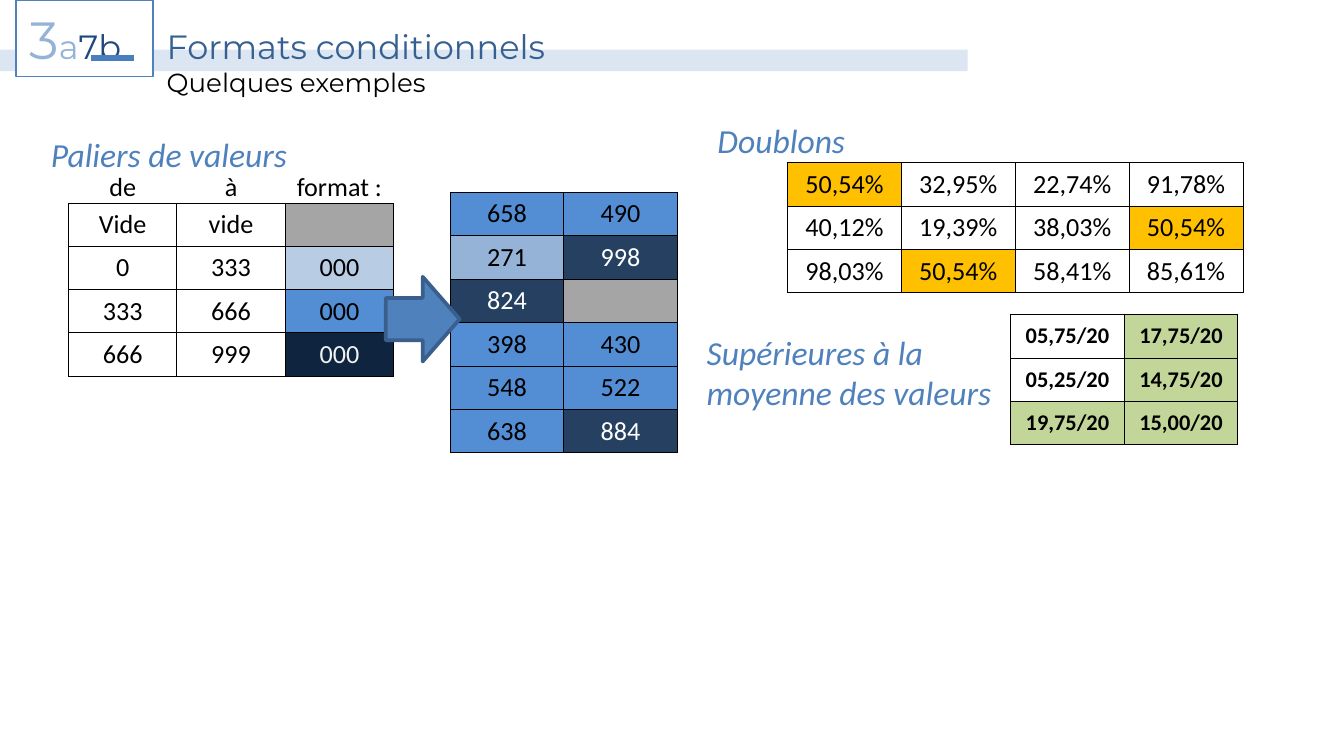
from collections import Counter
from lxml.etree import SubElement
from pptx import Presentation
from pptx.dml.color import RGBColor
from pptx.enum.shapes import MSO_CONNECTOR, MSO_SHAPE
from pptx.enum.text import MSO_ANCHOR, PP_ALIGN
from pptx.oxml.ns import qn
from pptx.util import Inches, Pt

BLACK = RGBColor(0x00, 0x00, 0x00)
WHITE = RGBColor(0xFF, 0xFF, 0xFF)
PALE = RGBColor(0xF2, 0xF2, 0xF2)
GREY = RGBColor(0xA5, 0xA5, 0xA5)
BAND = RGBColor(0xDC, 0xE6, 0xF2)
BLUE = RGBColor(0x4F, 0x81, 0xBD)
TITLE = RGBColor(0x37, 0x60, 0x92)
NAVY = RGBColor(0x1F, 0x49, 0x7D)
RULE = RGBColor(0x4B, 0x7E, 0xBC)
EDGE = RGBColor(0x3A, 0x5F, 0x8C)
SOFT = RGBColor(0x95, 0xB3, 0xD7)
LIGHT = RGBColor(0xB8, 0xCC, 0xE4)
MID = RGBColor(0x53, 0x8E, 0xD5)
DARK = RGBColor(0x25, 0x40, 0x61)
INK = RGBColor(0x0F, 0x25, 0x3F)
GOLD = RGBColor(0xFF, 0xC0, 0x00)
GREEN = RGBColor(0xC2, 0xD6, 0x9A)

# Content
HEAD = [("Formats conditionnels", 18, TITLE), ("Quelques exemples", 14, BLACK)]
BADGE = [("3", 28, SOFT), ("a", 18, SOFT), ("7b", 18, NAVY)]
LABELS = [
    ("Paliers de valeurs", 0.28, 0.95, 0.4),
    ("Supérieures à la moyenne des valeurs", 5.16, 2.42, 0.71),
    ("Doublons", 5.24, 0.84, 0.4),
]
LEGEND = [
    ["de", "à", "format :"],
    ["Vide", "vide", ""],
    ["0", "333", "000"],
    ["333", "666", "000"],
    ["666", "999", "000"],
]
LEGEND_FILLS = [None, GREY, LIGHT, MID, INK]
TIERS = [["658", "490"], ["271", "998"], ["824", ""],
         ["398", "430"], ["548", "522"], ["638", "884"]]
RATES = [
    ["50,54%", "32,95%", "22,74%", "91,78%"],
    ["40,12%", "19,39%", "38,03%", "50,54%"],
    ["98,03%", "50,54%", "58,41%", "85,61%"],
]
MARKS = [["05,75/20", "17,75/20"], ["05,25/20", "14,75/20"],
         ["19,75/20", "15,00/20"]]


# Conditional formats: each gives the fill of one cell
def mark(text):
    return float(text.split("/")[0].replace(",", "."))


COUNTS = Counter(sum(RATES, []))
SCORES = [mark(text) for text in sum(MARKS, [])]
MEAN = sum(SCORES) / len(SCORES)


def tier_fill(text, row, col):
    if not text:
        return GREY
    return SOFT if int(text) < 333 else MID if int(text) < 666 else DARK


def legend_fill(text, row, col):
    return LEGEND_FILLS[row] if col == 2 else None


def twin_fill(text, row, col):
    return GOLD if COUNTS[text] > 1 else None


def mean_fill(text, row, col):
    return GREEN if mark(text) > MEAN else None


# Rows, place, fill rule, size, bold, header rows
TABLES = [
    (TIERS, (3.35, 1.43, 1.69, 1.94), tier_fill, 14, False, 0),
    (LEGEND, (0.51, 1.19, 2.42, 1.61), legend_fill, 14, False, 1),
    (RATES, (5.86, 1.21, 3.39, 0.97), twin_fill, 14, False, 0),
    (MARKS, (7.52, 2.34, 1.69, 0.97), mean_fill, 12, True, 0),
]
TEXT_ON = {DARK: WHITE, INK: PALE}


def box(*nums):
    return [Inches(n) for n in nums]


def style(font, name, size, color):
    font.name, font.size, font.color.rgb = name, Pt(size), color


def add_block(kind, place, fill, line=None, width=0):
    block = slide.shapes.add_shape(kind, *box(*place))
    block.shadow.inherit = False
    block.fill.solid()
    block.fill.fore_color.rgb = fill
    if line is None:
        block.line.fill.background()
    else:
        block.line.color.rgb = line
        block.line.width = Pt(width)
    return block


def add_borders(cell, sides):
    props = cell._tc.get_or_add_tcPr()
    for side in sides:
        line = SubElement(props, qn("a:ln" + side), w=str(Pt(0.5)))
        fill = SubElement(line, qn("a:solidFill"))
        SubElement(fill, qn("a:srgbClr"), val=str(BLACK))


def add_grid(rows, place, rule, size, bold, heads):
    # The table shares its width and height equally among columns and rows
    grid = slide.shapes.add_table(len(rows), len(rows[0]), *box(*place)).table
    grid.first_row = grid.horz_banding = False
    for r, row in enumerate(rows):
        for c, text in enumerate(row):
            cell = grid.cell(r, c)
            cell.margin_left = cell.margin_right = 0
            cell.margin_top = cell.margin_bottom = 0
            head = r < heads
            cell.vertical_anchor = MSO_ANCHOR.BOTTOM if head else MSO_ANCHOR.MIDDLE
            add_borders(cell, "B" if head else "LRTB")
            fill = rule(text, r, c)
            if fill is None:
                cell.fill.background()
            else:
                cell.fill.solid()
                cell.fill.fore_color.rgb = fill
            cell.text = text
            para = cell.text_frame.paragraphs[0]
            para.alignment = PP_ALIGN.CENTER
            para.font.bold = bold
            style(para.font, "Calibri", size, TEXT_ON.get(fill, BLACK))


# A 16:9 slide
deck = Presentation()
deck.slide_width = Inches(10)
deck.slide_height = deck.slide_width * 9 // 16
slide = deck.slides.add_slide(deck.slide_layouts[5])

# Title over its band
add_block(MSO_SHAPE.RECTANGLE, (0, 0.37, 7.2, 0.16), BAND)
title = slide.shapes.title
slide.shapes.element.append(title.element)
title.left, title.top, title.width, title.height = box(1.14, 0.14, 6.46, 0.64)
frame = title.text_frame
frame.text = "\n".join(text for text, size, color in HEAD)
frame.vertical_anchor = MSO_ANCHOR.TOP
for para, (text, size, color) in zip(frame.paragraphs, HEAD):
    para.alignment = PP_ALIGN.LEFT
    style(para.font, "Montserrat", size, color)

# Badge and its underline
badge = add_block(MSO_SHAPE.RECTANGLE, (0.12, 0, 1.02, 0.57), WHITE, BLUE, 0.75)
para = badge.text_frame.paragraphs[0]
para.alignment = PP_ALIGN.LEFT
for text, size, color in BADGE:
    run = para.add_run()
    run.text = text
    style(run.font, "Montserrat", size, color)
rule = slide.shapes.add_connector(MSO_CONNECTOR.STRAIGHT, *box(1, 0.43, 0.68, 0.43))
rule.line.color.rgb = RULE
rule.line.width = Pt(3)
SubElement(rule.element.spPr, qn("a:effectLst"))

# Tables, then the arrow between the first two
for spot in TABLES:
    add_grid(*spot)
add_block(MSO_SHAPE.RIGHT_ARROW, (2.87, 2.06, 0.55, 0.63), BLUE, EDGE, 2)

# Labels
for text, left, top, height in LABELS:
    label = slide.shapes.add_textbox(*box(left, top, 2.44, height))
    label.text_frame.word_wrap = True
    para = label.text_frame.paragraphs[0]
    para.text = text
    para.font.italic = True
    style(para.font, "Calibri", 18, BLUE)

deck.save("out.pptx")
